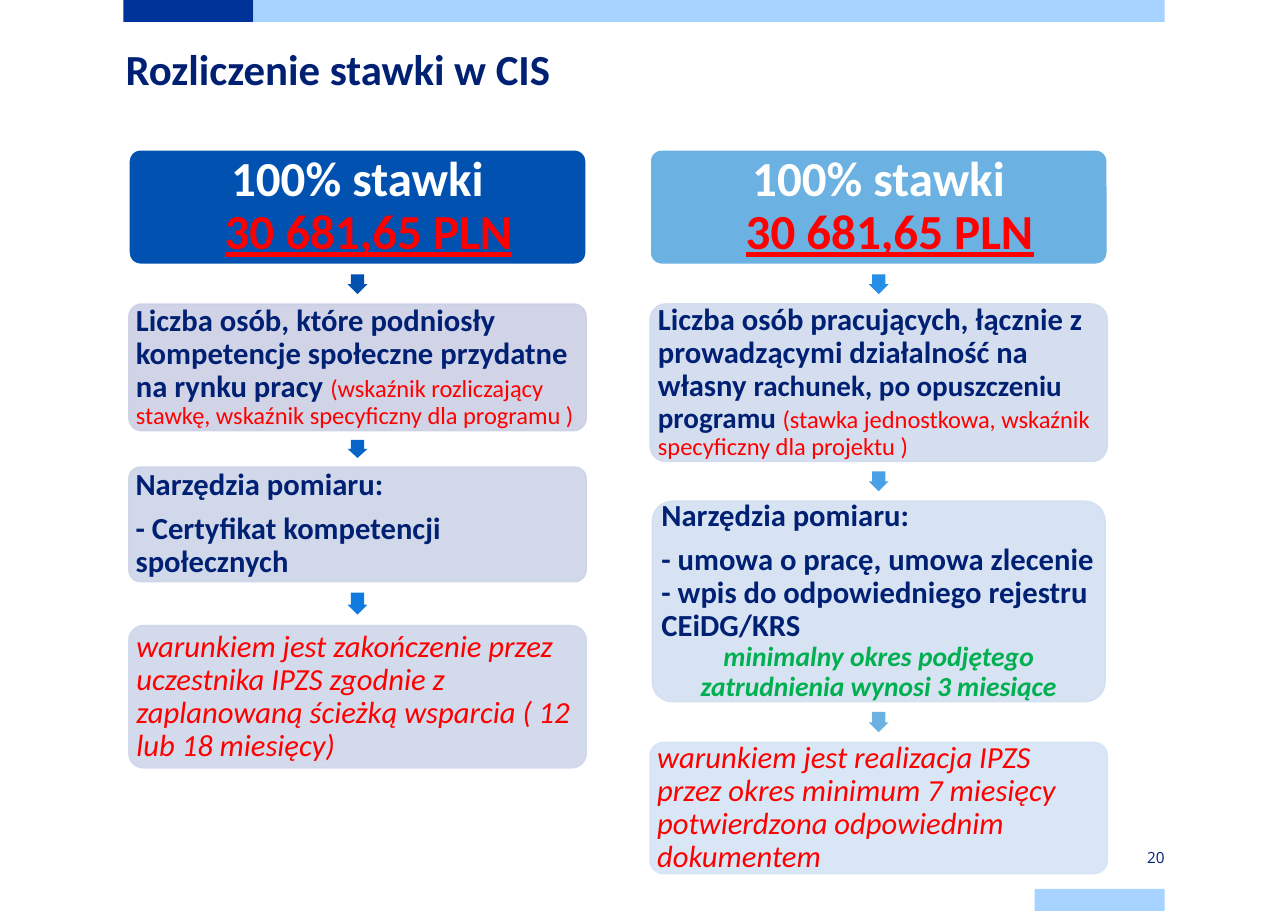
from dataclasses import dataclass
from typing import NamedTuple

from lxml.etree import SubElement
from pptx import Presentation
from pptx.dml.color import RGBColor
from pptx.enum.shapes import MSO_SHAPE
from pptx.enum.text import MSO_ANCHOR, PP_ALIGN
from pptx.oxml.ns import qn
from pptx.util import Inches, Pt


class Style(NamedTuple):
    """Look of one text run."""
    size: int
    color: str
    bold: bool = False
    italic: bool = False
    underline: bool = False
    font: str = "Calibri"


class Para(NamedTuple):
    """Paragraph made of (text, style) runs, with its layout."""
    runs: list
    align: PP_ALIGN = PP_ALIGN.LEFT
    after: float = 0
    indent: float = 0


class Card(NamedTuple):
    """Box of a column: gap above, height and side margin in cells."""
    gap: float
    height: float
    fill: str
    paras: list
    arrow: str = ""
    margin: float = 0


@dataclass(frozen=True)
class Theme:
    """Colours, type sizes and grid cell of the slide."""
    cell: int = Inches(0.1)
    width: float = 116.9
    height: float = 82.7
    left: float = 11.2
    right: float = 105.7
    tab: float = 11.8
    band: float = 2
    dark: str = "003399"
    light: str = "A6D3FF"
    white: str = "FFFFFF"
    title: Style = Style(28, "002073", bold=True)
    page: Style = Style(10, "002073", font="Open Sans")
    rate: Style = Style(32, "FFFFFF", bold=True)
    amount: Style = Style(32, "FF0000", bold=True, underline=True)
    body: Style = Style(20, "002073", bold=True)
    tight: Style = Style(19, "002073", bold=True)
    note: Style = Style(16, "FF0000")
    condition: Style = Style(20, "FF0000", italic=True)
    minimum: Style = Style(18, "00B050", bold=True, italic=True)


T = Theme()


def cells(*values):
    """Turn grid cells into lengths."""
    return [round(v * T.cell) for v in values]


def write(tf, paras, inset=0.3, spacing=0.9):
    """Fill a text frame with paragraphs, run by run."""
    tf.word_wrap = True
    tf.vertical_anchor = MSO_ANCHOR.MIDDLE
    tf.margin_left, tf.margin_top, tf.margin_right, tf.margin_bottom = cells(*[inset] * 4)
    for i, para in enumerate(paras):
        p = tf.add_paragraph() if i else tf.paragraphs[0]
        p.alignment, p.line_spacing, p.space_after = para.align, spacing, Pt(para.after)
        if para.indent:
            p._p.get_or_add_pPr().set("marL", str(cells(para.indent)[0]))
        for text, style in para.runs:
            r = p.add_run()
            r.text = text
            f = r.font
            f.name, f.size, f.bold = style.font, Pt(style.size), style.bold
            f.italic, f.underline = style.italic, style.underline
            f.color.rgb = RGBColor.from_string(style.color)


def add_block(s, kind, box, fill):
    """Add a plain filled shape without line or shadow."""
    sp = s.shapes.add_shape(kind, *cells(*box))
    sp.shadow.inherit = False
    sp.fill.solid()
    sp.fill.fore_color.rgb = RGBColor.from_string(fill)
    sp.line.fill.background()
    return sp


def add_card(s, box, card, header):
    """Add a rounded card; cards below the header are slightly transparent."""
    sp = add_block(s, MSO_SHAPE.ROUNDED_RECTANGLE, box, card.fill)
    sp.adjustments[0] = 0.1
    sp.line.color.rgb = RGBColor.from_string(T.white if header else card.fill)
    sp.line.width = Pt(1)
    if not header:
        for color in sp._element.spPr.iter(qn("a:srgbClr")):
            SubElement(color, qn("a:alpha"), val="90000")
    write(sp.text_frame, card.paras)


def add_column(s, box, cards):
    """Stack cards in a box with a down arrow in each gap."""
    x, y, w = box
    size = 1.8
    for i, card in enumerate(cards):
        if card.arrow:
            length = card.gap / 2
            arrow = (x + (w - size) / 2, y + length / 2, size, length)
            sp = add_block(s, MSO_SHAPE.DOWN_ARROW, arrow, card.arrow)
            sp.adjustments[0], sp.adjustments[1] = 0.67, 0.5
        y += card.gap
        add_card(s, (x + card.margin, y, w - 2 * card.margin, card.height), card, i == 0)
        y += card.height


def add_frame(s, title, number):
    """Add the bands, the title and the page number."""
    page_x = T.right - T.tab
    bands = [
        (T.left, 0, T.tab, T.dark),
        (T.left + T.tab, 0, T.right - T.left - T.tab, T.light),
        (page_x, T.height - T.band, T.tab, T.light),
    ]
    for x, y, w, fill in bands:
        add_block(s, MSO_SHAPE.RECTANGLE, (x, y, w, T.band), fill)
    texts = [
        ((T.left + 0.2, 3.4, 60, 5.7), Para([(title, T.title)])),
        ((page_x, 76.8, T.tab, T.band), Para([(number, T.page)], PP_ALIGN.RIGHT)),
    ]
    for box, para in texts:
        tf = s.shapes.add_textbox(*cells(*box)).text_frame
        write(tf, [para], inset=0, spacing=1)


def main():
    """Build the slide and save it."""
    prs = Presentation()
    prs.slide_width, prs.slide_height = cells(T.width, T.height)
    s = prs.slides.add_slide(prs.slide_layouts[6])
    add_frame(s, "Rozliczenie stawki w CIS", "20")

    rate = [
        Para([("100% stawki", T.rate)], PP_ALIGN.CENTER),
        Para([("30 681,65 PLN", T.amount)], PP_ALIGN.CENTER, indent=2),
    ]
    tools = Para([("Narzędzia pomiaru:", T.body)], after=7)
    skills = [
        Card(0, 10.4, "0051B0", rate),
        Card(3.6, 11.5, "CCD0E4", [Para([
            ("Liczba osób, które podniosły kompetencje społeczne przydatne na rynku pracy ", T.body),
            ("(wskaźnik rozliczający stawkę, wskaźnik specyficzny dla programu )", T.note),
        ])], "0051B0"),
        Card(3.3, 10.4, "CDD4E7", [
            tools, Para([("- Certyfikat kompetencji społecznych", T.body)]),
        ], "0765C9"),
        Card(4, 12.9, "CFD7EB", [Para([
            ("warunkiem jest zakończenie przez uczestnika IPZS zgodnie z "
             "zaplanowaną ścieżką wsparcia ( 12 lub 18 miesięcy)", T.condition),
        ])], "107ADF"),
    ]
    jobs = [
        Card(0, 10.4, "6BB1E2", rate),
        Card(3.6, 14.3, "D1DBEE", [Para([
            ("Liczba osób pracujących, łącznie z prowadzącymi działalność na własny ", T.body),
            ("rachunek, po opuszczeniu programu ", T.tight),
            ("(stawka jednostkowa, wskaźnik specyficzny dla projektu )", T.note),
        ])], "278EE7"),
        Card(3.6, 18.2, "D3DFF1", [
            tools,
            Para([("- umowa o pracę, umowa zlecenie", T.body)]),
            Para([("- wpis do odpowiedniego rejestru CEiDG/KRS", T.body)]),
            Para([("minimalny okres podjętego zatrudnienia wynosi 3 miesiące", T.minimum)],
                 PP_ALIGN.CENTER),
        ], "4AA0E4", 0.2),
        Card(3.7, 11.9, "D5E4F4", [Para([
            ("warunkiem jest realizacja IPZS przez okres minimum 7 miesięcy "
             "potwierdzona odpowiednim dokumentem", T.condition),
        ])], "6BB1E2"),
    ]
    for x, cards in ((11.7, skills), (59, jobs)):
        add_column(s, (x, 13.6, 41.5), cards)
    prs.save("out.pptx")


if __name__ == "__main__":
    main()
